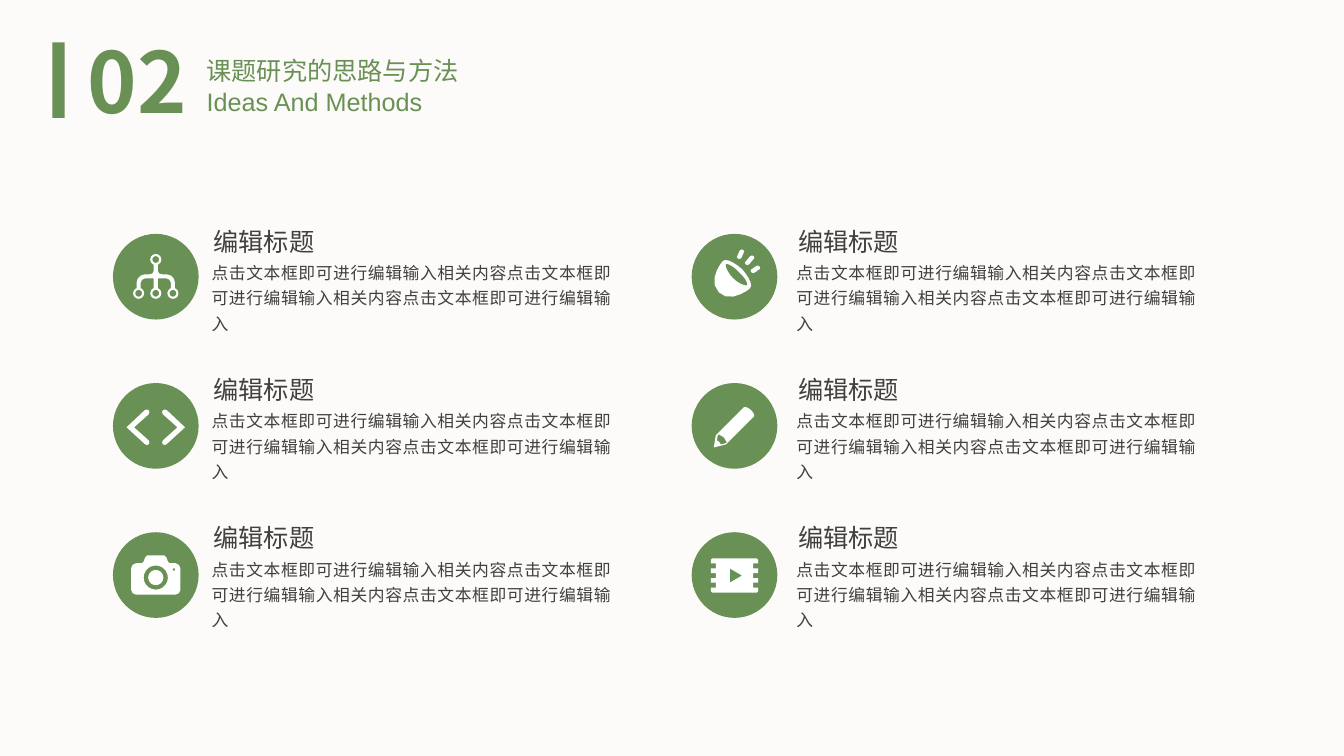
import math
from dataclasses import dataclass

from lxml import etree
from pptx import Presentation
from pptx.dml.color import RGBColor
from pptx.enum.shapes import MSO_SHAPE
from pptx.enum.text import MSO_ANCHOR, MSO_AUTO_SIZE, PP_ALIGN
from pptx.oxml.ns import qn
from pptx.util import Inches, Pt

RECT, OVAL, SNIP = MSO_SHAPE.RECTANGLE, MSO_SHAPE.OVAL, MSO_SHAPE.SNIP_1_RECTANGLE
LEFT, CENTER, JUSTIFY = PP_ALIGN.LEFT, PP_ALIGN.CENTER, PP_ALIGN.JUSTIFY
TOP = MSO_ANCHOR.TOP
GROW = MSO_AUTO_SIZE.SHAPE_TO_FIT_TEXT


@dataclass(frozen=True)
class Theme:
    background: RGBColor = RGBColor(0xFD, 0xFB, 0xF9)
    green: RGBColor = RGBColor(0x69, 0x91, 0x55)
    white: RGBColor = RGBColor(0xFF, 0xFF, 0xFF)
    gray: RGBColor = RGBColor(0x40, 0x40, 0x40)
    cjk: str = "Noto Sans CJK SC"
    latin: str = "Arial"
    number: int = 60
    title: int = 18
    body: int = 12


THEME = Theme()
ITEM_TITLE = "编辑标题"
ITEM_BODY = "点击文本框即可进行编辑输入相关内容" * 2 + "点击文本框即可进行编辑输入"


def paint(sp, color=None):
    sp.shadow.inherit = False
    sp.line.fill.background()
    if color is None:
        sp.fill.background()
    else:
        sp.fill.solid()
        sp.fill.fore_color.rgb = color


def add_shape(slide, kind, x, y, w, h, color=None):
    sp = slide.shapes.add_shape(kind, Inches(x), Inches(y), Inches(w), Inches(h))
    paint(sp, color)
    return sp


def write(s, text, size, color, font=THEME.cjk, align=LEFT, spacing=None,
          bold=False, wrap=True):
    tf = s.text_frame
    tf.word_wrap = wrap
    tf.auto_size = GROW
    tf.vertical_anchor = TOP
    p = tf.paragraphs[0]
    p.text = text
    p.alignment = align
    p.line_spacing = spacing
    p.font.size = Pt(size)
    p.font.bold = bold
    p.font.color.rgb = color
    p.font.name = font
    props = p._p.pPr.find(qn("a:defRPr"))
    etree.SubElement(props, qn("a:ea"), typeface=font)


def add_text(slide, x, y, w, h, *content, **style):
    s = slide.shapes.add_textbox(Inches(x), Inches(y), Inches(w), Inches(h))
    write(s, *content, **style)


def arc(cx, cy, r, start=0, sweep=360, steps=12):
    angles = [math.radians(start + sweep * i / steps) for i in range(steps)]
    return [(cx + r * math.cos(a), cy + r * math.sin(a)) for a in angles]


def capsule(x1, y1, x2, y2, r):
    turn = math.degrees(math.atan2(y2 - y1, x2 - x1))
    return (arc(x1, y1, r, turn + 90, 180, steps=4)
            + arc(x2, y2, r, turn - 90, 180, steps=4))


def curve(start, *segments, steps=5):
    points = [start]
    for b, c, d in segments:
        a = points[-1]
        for i in range(1, steps + 1):
            t = i / steps
            u = 1 - t
            weights = (u ** 3, 3 * u * u * t, 3 * u * t * t, t ** 3)
            points.append(tuple(sum(k * q[axis] for k, q in zip(weights, (a, b, c, d)))
                                for axis in (0, 1)))
    return points


def flip(points):
    return [(-x, y) for x, y in reversed(points)]


def mirror(half):
    return half + flip(half)


def hierarchy_icon():
    nodes = [(0, -17), (-17, 16.5), (0, 16.5), (17, 16.5)]
    rings = [arc(x, y, r) for x, y in nodes for r in (5.5, 3.4)]
    branches = mirror([(2, -11.8), (2, -5.5), (3.5, -3), (6.5, -2.3), (11, -2.3),
                       (15, -1), (18, 2), (19, 6), (19, 11.3), (15, 11.3), (15, 6),
                       (13.5, 3), (10.5, 1.7), (2, 1.7), (2, 11.3)])
    return rings + [branches]


def code_icon():
    chevron = [(29, 1.5), (11, -15.5), (9, -16.2), (7, -15.5), (6.3, -13.5), (7, -11.5),
               (21.5, 1.5), (7, 14.5), (6.3, 16.5), (7, 18.3), (9, 19), (11, 18)]
    return [chevron, flip(chevron)]


def camera_icon():
    body = mirror([(8.5, -19.5), (10.5, -17.5), (12, -13.5), (13.5, -11.8),
                   (19.5, -11.8), (23, -10), (24.5, -6.5), (24.5, 14.5),
                   (23, 18), (19.5, 19.5)])
    lens = [arc(0, 2.5, r, steps=20) for r in (12, 7.5)]
    return [body, *lens, arc(18, -5.5, 1.4, steps=6)]


def lamp_icon():
    head = curve((-11.5, -15.5),
                 ((-14.5, -12.5), (-26.5, 4.5), (-15.5, 15.5)),
                 ((-5.5, 26.5), (12.5, 14.5), (15.5, 11.5)),
                 ((18.5, 8.5), (14.5, 0.5), (7.5, -7.5)),
                 ((-0.5, -14.5), (-8.5, -18.5), (-11.5, -15.5)))
    opening = curve((12.5, 8.5),
                    ((11.5, 9.5), (4.5, 7.5), (-1.5, 1.5)),
                    ((-7.5, -4.5), (-9.5, -11.5), (-8.5, -12.5)),
                    ((-8.5, -13.5), (-1.5, -11.5), (4.5, -4.5)),
                    ((11.5, 1.5), (13.5, 7.5), (12.5, 8.5)))
    rays = [(4.8, -20, 7.3, -24.5), (12.8, -14, 17.3, -18.5), (18.5, -6, 23, -8.5)]
    return [head, opening] + [capsule(*ray, 2.5) for ray in rays]


def pencil_icon():
    body = curve((9.5, -18.5), ((9.5, -18.5), (12.5, -19.5), (16.5, -15.5)),
                 ((20.5, -11.5), (19.5, -9.5), (19.5, -9.5)))
    body += [(-8.5, 18.5), (-20.5, 21.5), (-18.5, 9.5)]
    tip = [(-9.5, 17.5), (-13.5, 18.5), (-15.5, 15.5), (-17.5, 14.5), (-16.5, 9.5),
           (-15.5, 8.5), (-10.5, 11.5), (-7.5, 16.5)]
    return [body, tip]


def film_icon():
    notches = [(x, top + dy) for top in (-11.5, -2, 7.5)
               for x, dy in ((23.5, 0), (18.5, 0), (18.5, 5), (23.5, 5))]
    frame = mirror([(22, -16.5), (23.5, -15)] + notches + [(23.5, 16), (22, 17.5)])
    return [frame, [(-4.5, -6.5), (7.5, 0.5), (-4.5, 7.5)]]


def add_icon(slide, cx, cy, contours):
    placed = [[(Inches(cx + x / 100), Inches(cy + y / 100)) for x, y in contour]
              for contour in contours]
    builder = slide.shapes.build_freeform(*placed[0][0], scale=1.0)
    for i, points in enumerate(placed):
        if i:
            builder.move_to(*points[0])
        builder.add_line_segments(points[1:], close=True)
    paint(builder.convert_to_shape(), THEME.white)


def add_header(slide, x, y):
    add_shape(slide, RECT, x, y, 0.12, 0.75, THEME.green)
    add_text(slide, x, y - 0.18, 1.68, 1.11, "02", THEME.number, THEME.green,
             align=CENTER, bold=True)
    add_text(slide, x + 1.43, y - 0.22, 2.73, 0.62, "课题研究的思路与方法",
             THEME.title, THEME.green, spacing=2.0, wrap=False)
    subtitle = add_shape(slide, SNIP, x + 1.43, y + 0.39, 5.49, 0.4)
    subtitle.adjustments[0] = 0
    write(subtitle, "Ideas And Methods", THEME.title, THEME.green, font=THEME.latin)


def add_badge(slide, x, y, size, contours):
    add_shape(slide, OVAL, x, y, size, size, THEME.green)
    add_icon(slide, x + size / 2, y + size / 2, contours)


def add_caption(slide, x, y):
    add_text(slide, x, y + 0.39, 4.16, 0.86, ITEM_BODY, THEME.body, THEME.gray,
             align=JUSTIFY, spacing=1.25)
    add_text(slide, x + 0.02, y, 1.23, 0.45, ITEM_TITLE, THEME.title,
             THEME.gray, align=JUSTIFY, spacing=1.25)


def add_items(slide, badge_y, badge_pitch, caption_y, caption_pitch):
    columns = [(1.12, 2.0, (hierarchy_icon, code_icon, camera_icon)),
               (6.86, 7.8, (lamp_icon, pencil_icon, film_icon))]
    for badge_x, caption_x, icons in columns:
        for row, icon in enumerate(icons):
            add_badge(slide, badge_x, badge_y + row * badge_pitch, 0.85, icon())
            add_caption(slide, caption_x, caption_y + row * caption_pitch)


def main():
    prs = Presentation()
    prs.slide_width, prs.slide_height = Inches(13.33), Inches(7.5)
    slide = prs.slides.add_slide(prs.slide_layouts[6])
    slide.background.fill.solid()
    slide.background.fill.fore_color.rgb = THEME.background
    add_header(slide, 0.52, 0.42)
    add_items(slide, 2.32, 1.48, 2.12, 1.47)
    prs.save("out.pptx")


if __name__ == "__main__":
    main()
